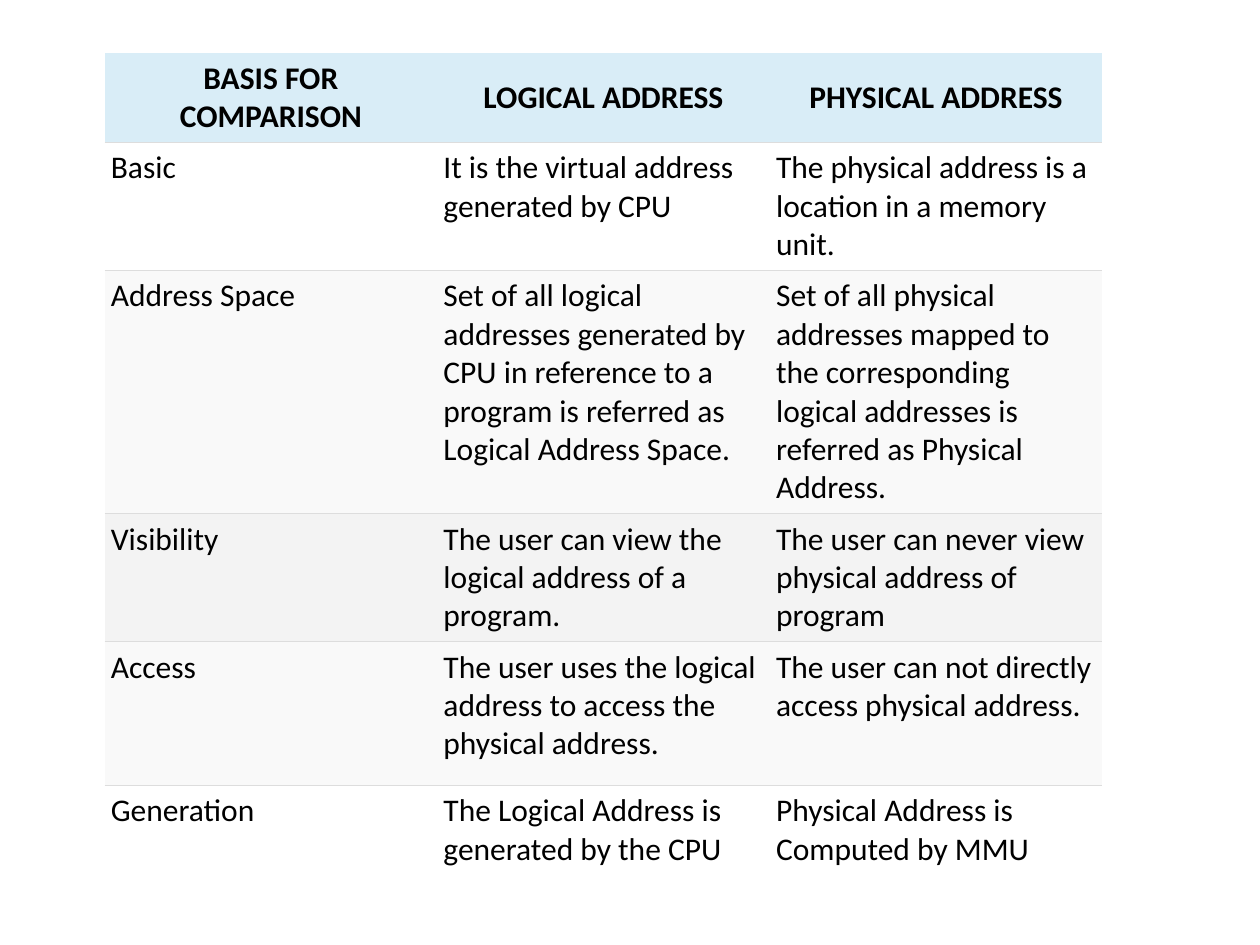
from lxml import etree
from pptx import Presentation
from pptx.dml.color import RGBColor
from pptx.enum import text
from pptx.oxml import ns
from pptx.util import Inches, Pt

BLACK = RGBColor(0x00, 0x00, 0x00)
WHITE = RGBColor(0xFF, 0xFF, 0xFF)
HEADER_BLUE = RGBColor(0xD9, 0xED, 0xF7)
PALE_GREY = RGBColor(0xF9, 0xF9, 0xF9)
LIGHT_GREY = RGBColor(0xF3, 0xF3, 0xF3)
RULE_GREY = RGBColor(0xDD, 0xDD, 0xDD)

NO_STYLE = "{2D5ABB26-0587-4C30-8999-92F81FD0307C}"
CELL_MARGIN = Inches(0.05)

# Row height in inches, fill, and the three cell texts
COMPARISON = [
    (0.64, HEADER_BLUE, ("BASIS FOR COMPARISON", "LOGICAL ADDRESS", "PHYSICAL ADDRESS")),
    (0.89, WHITE, ("Basic",
                   "It is the virtual address generated by CPU",
                   "The physical address is a location in a memory unit.")),
    (1.89, PALE_GREY, ("Address Space",
                       "Set of all logical addresses generated by CPU in reference "
                       "to a program is referred as Logical Address Space.",
                       "Set of all physical addresses mapped to the corresponding "
                       "logical addresses is referred as Physical Address.")),
    (0.89, LIGHT_GREY, ("Visibility",
                        "The user can view the logical address of a program.",
                        "The user can never view physical address of program")),
    (1.14, PALE_GREY, ("Access",
                       "The user uses the logical address to access the physical address.",
                       "The user can not directly access physical address.")),
    (0.89, WHITE, ("Generation",
                   "The Logical Address is generated by the CPU",
                   "Physical Address is Computed by MMU")),
]


def write_text(frame, wording, size=18, bold=False, color=BLACK,
               align=text.PP_ALIGN.LEFT):
    paragraph = frame.paragraphs[0]
    paragraph.alignment = align
    run = paragraph.add_run()
    run.text = wording
    run.font.name = "Calibri"
    run.font.size = Pt(size)
    run.font.bold = bold
    run.font.color.rgb = color


def add_rule(cell, side, color=RULE_GREY, width=0.75):
    """Draw one cell border; side is the XML tag, such as lnT or lnB."""
    line = etree.Element(ns.qn(f"a:{side}"), w=str(Pt(width)))
    fill = etree.SubElement(line, ns.qn("a:solidFill"))
    etree.SubElement(fill, ns.qn("a:srgbClr"), val=str(color))
    cell._tc.get_or_add_tcPr().insert(0, line)


def format_cell(cell, wording, fill, is_header):
    cell.margin_left = cell.margin_right = CELL_MARGIN
    cell.margin_top = cell.margin_bottom = CELL_MARGIN
    cell.vertical_anchor = text.MSO_ANCHOR.MIDDLE if is_header else text.MSO_ANCHOR.TOP
    cell.fill.solid()
    cell.fill.fore_color.rgb = fill
    add_rule(cell, "lnB" if is_header else "lnT")
    write_text(cell.text_frame, wording, bold=is_header,
               align=text.PP_ALIGN.CENTER if is_header else text.PP_ALIGN.LEFT)


def add_comparison(slide, left, top, width, height):
    column_count = len(COMPARISON[0][2])
    comparison = slide.shapes.add_table(
        len(COMPARISON), column_count, left, top, width, height).table
    comparison._tbl.tblPr.find(ns.qn("a:tableStyleId")).text = NO_STYLE
    comparison.horz_banding = False
    for column in comparison.columns:
        column.width = width // column_count
    for index, (row_height, fill, wordings) in enumerate(COMPARISON):
        row = comparison.rows[index]
        row.height = Inches(row_height)
        for cell, wording in zip(row.cells, wordings):
            format_cell(cell, wording, fill, is_header=index == 0)


def main():
    deck = Presentation()
    deck.slide_width, deck.slide_height = Inches(10), Inches(7.5)
    slide = deck.slides.add_slide(deck.slide_layouts[6])
    add_comparison(slide, Inches(0.83), Inches(0.42), Inches(7.92), Inches(6.34))
    deck.save("out.pptx")


if __name__ == "__main__":
    main()
